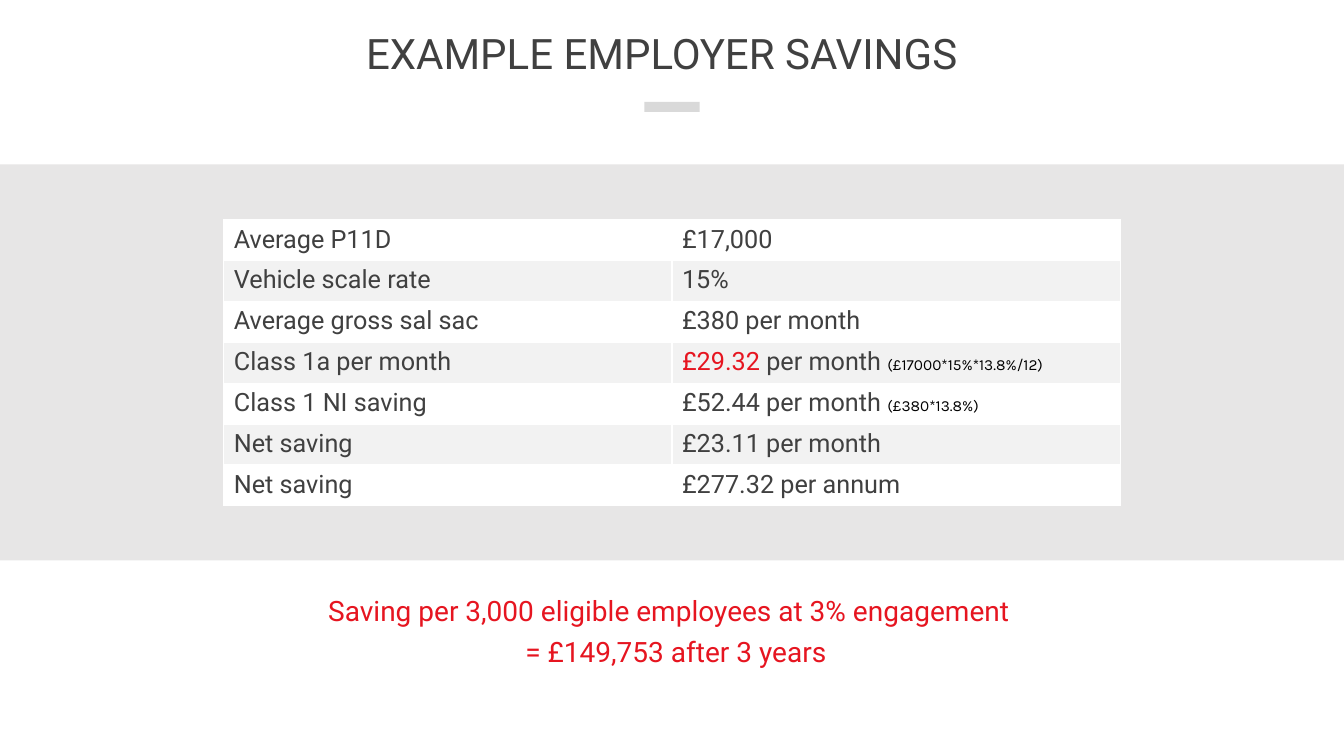
from dataclasses import dataclass

import pptx
import pptx.dml.color
import pptx.enum.shapes
import pptx.enum.text
import pptx.util

Inches = pptx.util.Inches
Pt = pptx.util.Pt
RGBColor = pptx.dml.color.RGBColor
ALIGN = pptx.enum.text.PP_ALIGN
ANCHOR = pptx.enum.text.MSO_ANCHOR

WHITE = RGBColor(0xFF, 0xFF, 0xFF)
PALE = RGBColor(0xF2, 0xF2, 0xF2)
BAND = RGBColor(0xE7, 0xE6, 0xE6)
RULE = RGBColor(0xD9, 0xD9, 0xD9)
DARK = RGBColor(0x40, 0x40, 0x40)
RED = RGBColor(0xE6, 0x15, 0x20)
BLACK = RGBColor(0, 0, 0)


@dataclass(frozen=True)
class Run:
    text: str
    size: float = 18
    color: RGBColor = DARK
    font: str = "Roboto"


@dataclass(frozen=True)
class Row:
    label: str
    value: tuple[Run, ...]


@dataclass(frozen=True)
class Bar:
    left: float
    top: float
    width: float
    height: float
    color: RGBColor


def sum_note(text: str) -> Run:
    """Small print showing how a value is worked out."""
    return Run(text, 11, BLACK, "Karla")


BARS = (
    Bar(6.39, 1.01, 0.55, 0.1, RULE),
    Bar(0, 1.63, 13.33, 3.93, BAND),
)
ROWS = (
    Row("Average P11D", (Run("£17,000"),)),
    Row("Vehicle scale rate", (Run("15%"),)),
    Row("Average gross sal sac", (Run("£380 per month"),)),
    Row("Class 1a per month", (Run("£29.32 ", color=RED), Run("per month "),
                               sum_note("(£17000*15%*13.8%/12)"))),
    Row("Class 1 NI saving", (Run("£52.44 per month "),
                              sum_note("(£380*13.8%)"))),
    Row("Net saving", (Run("£23.11 per month"),)),
    Row("Net saving", (Run("£277.32 per annum"),)),
)
CLAIM = (
    Run("Saving per 3,000 eligible employees at 3% engagement ", 20, RED),
    Run(" = £149,753 after 3 years", 20, RED),
)


def add_runs(para, runs: tuple[Run, ...], split: bool = False) -> None:
    """Add runs to a paragraph, with a line break between them if split."""
    for index, item in enumerate(runs):
        if split and index:
            para.add_line_break()
        run = para.add_run()
        run.text = item.text
        run.font.size = Pt(item.size)
        run.font.name = item.font
        run.font.color.rgb = item.color


def set_title(slide) -> None:
    title = slide.shapes.title
    title.left, title.top = Inches(0), Inches(0)
    title.width, title.height = Inches(13.33), Inches(1.14)
    frame = title.text_frame
    frame.vertical_anchor = ANCHOR.MIDDLE
    frame.margin_right = Inches(0.3)
    para = frame.paragraphs[0]
    para.alignment = ALIGN.CENTER
    para.line_spacing = 0.8
    add_runs(para, (Run("EXAMPLE EMPLOYER SAVINGS", 30),))


def add_bar(slide, bar: Bar) -> None:
    shape = slide.shapes.add_shape(
        pptx.enum.shapes.MSO_SHAPE.RECTANGLE, Inches(bar.left),
        Inches(bar.top), Inches(bar.width), Inches(bar.height))
    shape.shadow.inherit = False
    shape.fill.solid()
    shape.fill.fore_color.rgb = bar.color
    shape.line.fill.background()


def add_grid(slide) -> None:
    table = slide.shapes.add_table(
        len(ROWS), 2, Inches(2.22), Inches(2.18),
        Inches(8.89), Inches(2.84)).table
    table.first_row = False
    table.horz_banding = False
    for index, row in enumerate(ROWS):
        for col, runs in enumerate(((Run(row.label),), row.value)):
            cell = table.cell(index, col)
            cell.fill.solid()
            cell.fill.fore_color.rgb = PALE if index % 2 else WHITE
            add_runs(cell.text_frame.paragraphs[0], runs)


def add_claim(slide) -> None:
    box = slide.shapes.add_textbox(
        Inches(0.92), Inches(5.77), Inches(11.5), Inches(0.93))
    box.text_frame.word_wrap = True
    para = box.text_frame.paragraphs[0]
    para.alignment = ALIGN.CENTER
    para.line_spacing = Pt(29)
    para.space_before = Pt(10)
    add_runs(para, CLAIM, split=True)


def main() -> None:
    deck = pptx.Presentation()
    deck.slide_width, deck.slide_height = Inches(13.33), Inches(7.5)
    slide = deck.slides.add_slide(deck.slide_layouts.get_by_name("Title Only"))
    set_title(slide)
    for bar in BARS:
        add_bar(slide, bar)
    add_grid(slide)
    add_claim(slide)
    deck.save("out.pptx")


if __name__ == "__main__":
    main()
